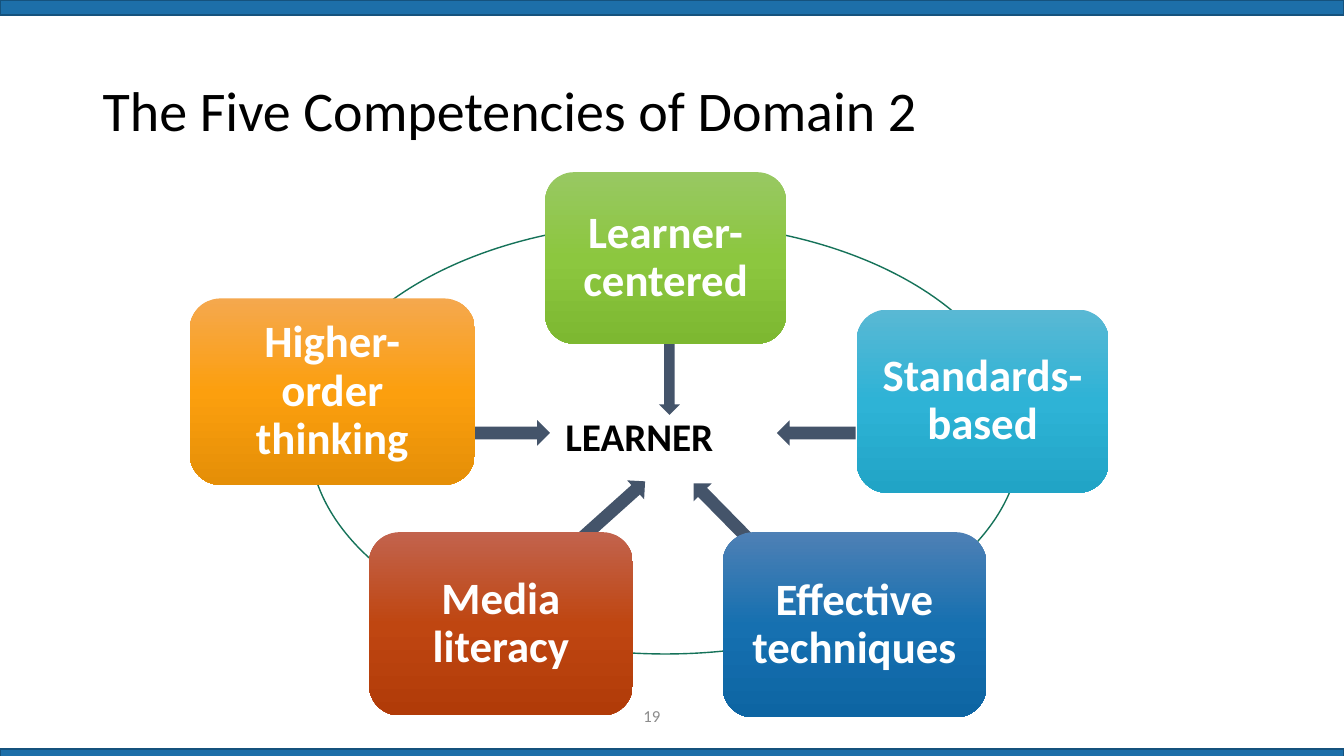
from copy import deepcopy

from pptx import Presentation
from pptx.dml.color import RGBColor
from pptx.enum.shapes import MSO_SHAPE
from pptx.enum.text import MSO_ANCHOR, PP_ALIGN
from pptx.oxml.ns import qn
from pptx.util import Cm, Pt

COLORS = {
    "bar": "1D6FA9", "bar_edge": "15527D", "ring": "157259", "arrow": "44546A",
    "black": "000000", "white": "FFFFFF", "number": "8C8C8C",
}
GRADIENTS = {
    "green": ("98C862", "8CC73F", "7DB831"),
    "cyan": ("59B8D4", "2EB3D6", "21A4C6"),
    "orange": ("F5A84E", "FC9F0E", "E58F07"),
    "blue": ("4E80B5", "1670B0", "0D65A3"),
    "red": ("C2634D", "BF4611", "B13B08"),
}

prs = Presentation()
prs.slide_width, prs.slide_height = Cm(33.87), Cm(19.05)
slide = prs.slides.add_slide(prs.slide_layouts[6])


def add_preset(preset, box, fill=None, line=None):
    shape = slide.shapes.add_shape(preset, *map(Cm, box))
    shape.shadow.inherit = False
    if fill:
        shape.fill.solid()
        shape.fill.fore_color.rgb = RGBColor.from_string(COLORS[fill])
    else:
        shape.fill.background()
    if line:
        shape.line.color.rgb = RGBColor.from_string(COLORS[line])
        shape.line.width = Pt(1)
    else:
        shape.line.fill.background()
    return shape


def write(shape, text, size, color, bold=False, align=PP_ALIGN.CENTER,
          anchor=MSO_ANCHOR.MIDDLE, spacing=0.9):
    frame = shape.text_frame
    frame.word_wrap = True
    frame.vertical_anchor = anchor
    paragraph = frame.paragraphs[0]
    paragraph.alignment = align
    paragraph.line_spacing = spacing
    run = paragraph.add_run()
    run.text = text
    run.font.name = "Calibri"
    run.font.size = Pt(size)
    run.font.bold = bold
    run.font.color.rgb = RGBColor.from_string(COLORS[color])


# Bars at the bottom and top edges
for bar_top in (18.87, 0):
    add_preset(MSO_SHAPE.RECTANGLE, (0, bar_top, 33.87, 0.38), "bar", "bar_edge")

# Title
title = slide.shapes.add_textbox(Cm(2.34), Cm(1.02), Cm(29.21), Cm(3.68))
write(title, "The Five Competencies of Domain 2", 40, "black", align=PP_ALIGN.LEFT)

# Ring behind the competencies
add_preset(MSO_SHAPE.OVAL, (7.8, 5.61, 17.93, 10.87), line="ring")

# Arrows pointing to the learner: box, rotation
arrows = [
    ((11.96, 10.59, 1.9, 0.64), 0),
    ((14.4, 12.52, 2.13, 0.64), 318.1),
    ((15.98, 9.3, 1.78, 0.53), 90),
    ((19.58, 10.59, 1.98, 0.64), 180),
    ((17.17, 12.6, 2.08, 0.64), 225.5),
]
for box, rotation in arrows:
    add_preset(MSO_SHAPE.RIGHT_ARROW, box, "arrow").rotation = rotation

learner = slide.shapes.add_textbox(Cm(14), Cm(10.26), Cm(5.87), Cm(1.45))
write(learner, "LEARNER", 28, "black", bold=True, align=PP_ALIGN.LEFT,
      anchor=MSO_ANCHOR.TOP, spacing=1.0)

# Competencies: text, gradient, box, side margin
competencies = [
    ("Learner-centered", "green", (13.74, 4.34, 6.07, 4.32), 0.35),
    ("Standards-based", "cyan", (21.59, 7.8, 6.35, 4.62), 0.35),
    ("Higher-order thinking", "orange", (4.78, 7.52, 7.19, 4.7), 0.45),
    ("Effective techniques", "blue", (18.21, 13.41, 6.65, 4.67), 0.35),
    ("Media literacy", "red", (9.3, 13.41, 6.65, 4.62), 0.35),
]
for text, gradient, box, margin in competencies:
    card = add_preset(MSO_SHAPE.ROUNDED_RECTANGLE, box)
    card.fill.gradient()
    card.fill.gradient_angle = 270
    # A third stop goes in beside the two default ones
    stop_list = card._element.spPr.find(qn("a:gradFill")).find(qn("a:gsLst"))
    stop_list.append(deepcopy(stop_list[0]))
    for i, stop in enumerate(card.fill.gradient_stops):
        stop.position = i / 2
        stop.color.rgb = RGBColor.from_string(GRADIENTS[gradient][i])
    frame = card.text_frame
    frame.margin_left = frame.margin_right = Cm(margin)
    frame.margin_top = frame.margin_bottom = Cm(0.35)
    write(card, text, 32, "white", bold=True)

# Slide number
number = slide.shapes.add_textbox(Cm(12.62), Cm(17.53), Cm(7.62), Cm(1.02))
write(number, "19", 12, "number", spacing=1.0)

prs.save("out.pptx")
